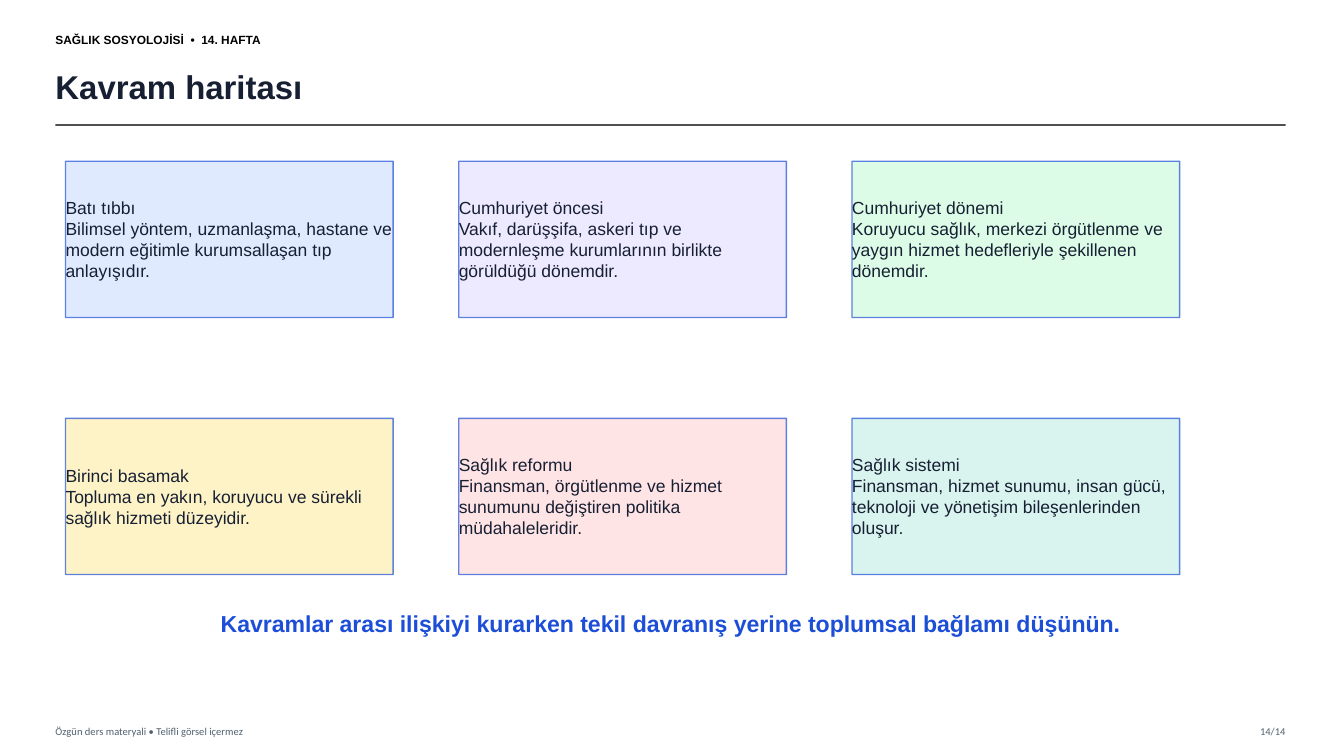
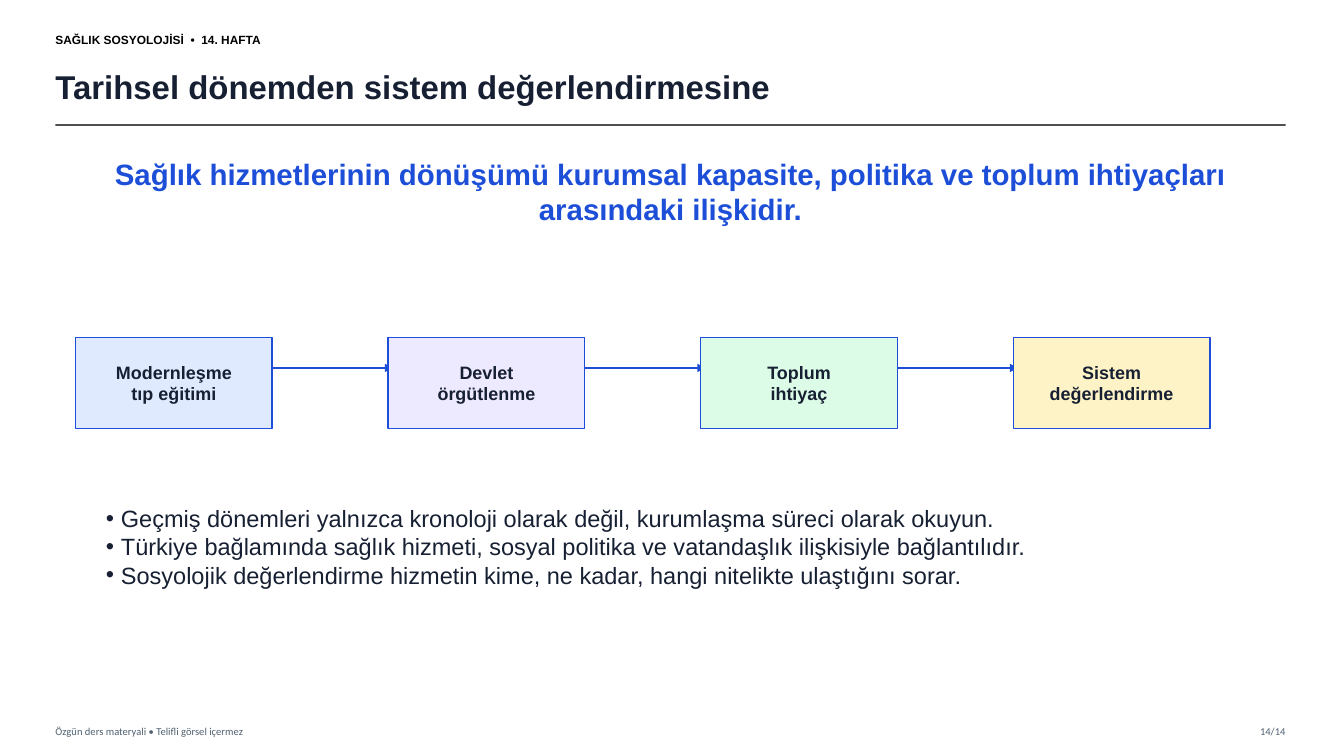
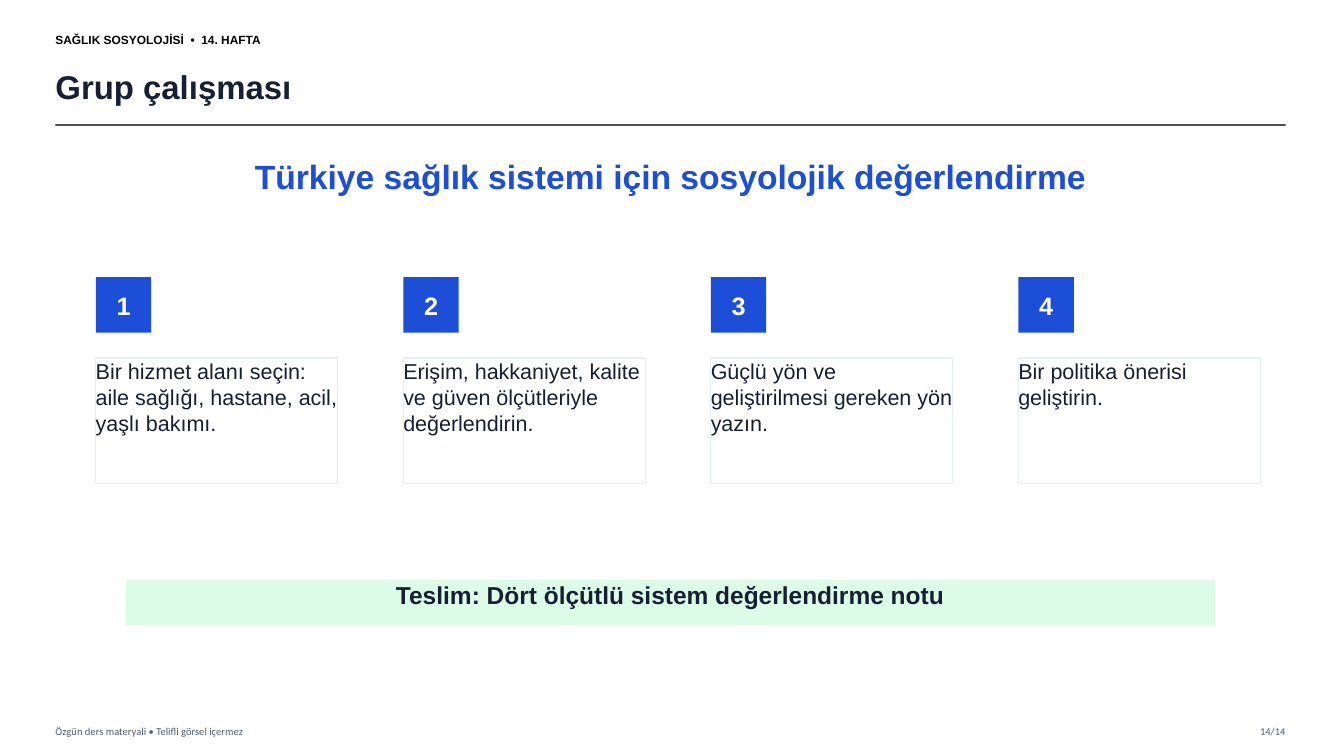
from dataclasses import dataclass, replace
from typing import NamedTuple, Optional

from pptx import Presentation
from pptx.dml.color import RGBColor
from pptx.enum.shapes import MSO_CONNECTOR, MSO_SHAPE
from pptx.enum.text import MSO_ANCHOR, PP_ALIGN
from pptx.oxml.ns import qn
from pptx.util import Pt
from lxml import etree

RECT = MSO_SHAPE.RECTANGLE
STRAIGHT = MSO_CONNECTOR.STRAIGHT
TOP, MIDDLE = MSO_ANCHOR.TOP, MSO_ANCHOR.MIDDLE
LEFT, CENTER, RIGHT = PP_ALIGN.LEFT, PP_ALIGN.CENTER, PP_ALIGN.RIGHT

EMU_PER_PX = 9144  # 100 px to the inch

COLORS = {
    "black": "000000", "white": "FFFFFF", "ink": "172033", "accent": "1D4ED8",
    "rule": "333333", "footer": "506070", "border": "E8EEF5",
    "blue": "DFEAFE", "violet": "EDE9FE", "green": "DCFCE7",
    "yellow": "FEF3C7", "rose": "FFE4E6", "teal": "D9F3EE",
}


class Box(NamedTuple):
    x: int
    y: int
    w: int
    h: int


@dataclass(frozen=True)
class Style:
    size: float
    color: str = "ink"
    bold: bool = False
    align: PP_ALIGN = LEFT
    anchor: MSO_ANCHOR = TOP
    font: str = "Arial"


@dataclass(frozen=True)
class Stroke:
    color: str
    width: float = 1
    opacity: int = 100


class Card(NamedTuple):
    fill: str
    lines: list[str]


KICKER = Style(8.5, "black", bold=True, anchor=MIDDLE)
TITLE = Style(23.5, bold=True, anchor=MIDDLE)
FOOTER = Style(7.5, "footer", anchor=MIDDLE, font="Calibri")
PAGE_NUMBER = replace(FOOTER, align=RIGHT)
CONCEPT = Style(12.5, anchor=MIDDLE)
STAGE = Style(12.8, bold=True, align=CENTER, anchor=MIDDLE)
BULLETS = Style(16.8)
BADGE = Style(18, "white", bold=True, align=CENTER, anchor=MIDDLE)
TASK = Style(15.4)
DELIVERY = Style(17.5, bold=True, align=CENTER)

BULLET_INDENT = 15

CONCEPTS = [
    Card("blue", ["Batı tıbbı", "Bilimsel yöntem, uzmanlaşma, hastane ve modern "
                  "eğitimle kurumsallaşan tıp anlayışıdır."]),
    Card("violet", ["Cumhuriyet öncesi", "Vakıf, darüşşifa, askeri tıp ve modernleşme "
                    "kurumlarının birlikte görüldüğü dönemdir."]),
    Card("green", ["Cumhuriyet dönemi", "Koruyucu sağlık, merkezi örgütlenme ve yaygın "
                   "hizmet hedefleriyle şekillenen dönemdir."]),
    Card("yellow", ["Birinci basamak", "Topluma en yakın, koruyucu ve sürekli sağlık "
                    "hizmeti düzeyidir."]),
    Card("rose", ["Sağlık reformu", "Finansman, örgütlenme ve hizmet sunumunu "
                  "değiştiren politika müdahaleleridir."]),
    Card("teal", ["Sağlık sistemi", "Finansman, hizmet sunumu, insan gücü, teknoloji "
                  "ve yönetişim bileşenlerinden oluşur."]),
]

STAGES = [
    Card("blue", ["Modernleşme", "tıp eğitimi"]),
    Card("violet", ["Devlet", "örgütlenme"]),
    Card("green", ["Toplum", "ihtiyaç"]),
    Card("yellow", ["Sistem", "değerlendirme"]),
]

READING_NOTES = [
    "Geçmiş dönemleri yalnızca kronoloji olarak değil, kurumlaşma süreci olarak okuyun.",
    "Türkiye bağlamında sağlık hizmeti, sosyal politika ve vatandaşlık ilişkisiyle bağlantılıdır.",
    "Sosyolojik değerlendirme hizmetin kime, ne kadar, hangi nitelikte ulaştığını sorar.",
]

TASKS = [
    "Bir hizmet alanı seçin: aile sağlığı, hastane, acil, yaşlı bakımı.",
    "Erişim, hakkaniyet, kalite ve güven ölçütleriyle değerlendirin.",
    "Güçlü yön ve geliştirilmesi gereken yön yazın.",
    "Bir politika önerisi geliştirin.",
]


def px(n: int) -> int:
    return n * EMU_PER_PX


def rgb(name: str) -> RGBColor:
    return RGBColor.from_string(COLORS[name])


def add_bullet(p) -> None:
    pPr = p._p.get_or_add_pPr()
    pPr.set("marL", str(px(BULLET_INDENT)))
    pPr.set("indent", str(-px(BULLET_INDENT)))
    etree.SubElement(pPr, qn("a:buFont")).set("typeface", "Arial")
    etree.SubElement(pPr, qn("a:buChar")).set("char", "•")


def write(sp, lines: list[str], style: Style, bulleted: bool = False) -> None:
    tf = sp.text_frame
    tf.word_wrap = True
    tf.vertical_anchor = style.anchor
    tf.margin_left = tf.margin_top = tf.margin_right = tf.margin_bottom = 0
    for i, line in enumerate(lines):
        p = tf.add_paragraph() if i else tf.paragraphs[0]
        p.alignment = style.align
        if bulleted:
            add_bullet(p)
        r = p.add_run()
        r.text = line
        r.font.size = Pt(style.size)
        r.font.name = style.font
        r.font.bold = style.bold
        r.font.color.rgb = rgb(style.color)


def add_text(s, box: Box, lines: list[str], style: Style, bulleted: bool = False) -> None:
    write(s.shapes.add_textbox(*map(px, box)), lines, style, bulleted)


def apply_stroke(sp, stroke: Stroke) -> None:
    sp.line.color.rgb = rgb(stroke.color)
    sp.line.width = Pt(stroke.width)
    if stroke.opacity < 100:
        color = sp._element.xpath("./p:spPr/a:ln//a:srgbClr")[0]
        etree.SubElement(color, qn("a:alpha")).set("val", str(stroke.opacity * 1000))


def add_rect(s, box: Box, fill: str, lines: list[str], style: Style,
             stroke: Optional[Stroke] = None) -> None:
    sp = s.shapes.add_shape(RECT, *map(px, box))
    sp.shadow.inherit = False
    sp.fill.solid()
    sp.fill.fore_color.rgb = rgb(fill)
    if stroke:
        apply_stroke(sp, stroke)
    else:
        sp.line.fill.background()
    write(sp, lines, style)


def add_rule(s, x1: int, x2: int, y: int, stroke: Stroke, arrow: bool = False) -> None:
    """Draw a horizontal line, with an arrowhead at x2 if asked."""
    line = s.shapes.add_connector(STRAIGHT, px(x1), px(y), px(x2), px(y))
    apply_stroke(line, stroke)
    spPr = line._element.spPr
    if arrow:
        etree.SubElement(spPr.find(qn("a:ln")), qn("a:tailEnd")).set("type", "triangle")
    etree.SubElement(spPr, qn("a:effectLst"))


def add_headline(s, box: Box, text: str, size: float) -> None:
    add_text(s, box, [text], Style(size, "accent", bold=True, align=CENTER))


def new_slide(prs, title: str):
    """Add a blank slide with the header, title, rule and footer."""
    s = prs.slides.add_slide(prs.slide_layouts[6])
    add_text(s, Box(55, 25, 360, 28), ["SAĞLIK SOSYOLOJİSİ  •  14. HAFTA"], KICKER)
    add_text(s, Box(55, 58, 1195, 55), [title], TITLE)
    add_rule(s, 55, 1275, 124, Stroke("rule", 1.2, 85))
    add_text(s, Box(55, 714, 600, 22),
             ["Özgün ders materyali • Telifli görsel içermez"], FOOTER)
    add_text(s, Box(1210, 714, 65, 22), ["14/14"], PAGE_NUMBER)
    return s


def concept_map(prs) -> None:
    s = new_slide(prs, "Kavram haritası")
    for i, card in enumerate(CONCEPTS):
        row, col = divmod(i, 3)
        box = Box(65 + 390 * col, 160 + 255 * row, 325, 155)
        add_rect(s, box, card.fill, card.lines, CONCEPT, Stroke("accent", opacity=70))
    add_headline(s, Box(100, 605, 1130, 45),
                 "Kavramlar arası ilişkiyi kurarken tekil davranış yerine "
                 "toplumsal bağlamı düşünün.", 16.5)


def period_to_system(prs) -> None:
    s = new_slide(prs, "Tarihsel dönemden sistem değerlendirmesine")
    left, pitch = 75, 310
    for i in range(len(STAGES) - 1):
        start = left + 180 + pitch * i
        add_rule(s, start, start + 135, 365, Stroke("accent", 2), arrow=True)
    for i, card in enumerate(STAGES):
        add_rect(s, Box(left + pitch * i, 335, 195, 90), card.fill, card.lines,
                 STAGE, Stroke("accent"))
    add_headline(s, Box(80, 155, 1170, 105),
                 "Sağlık hizmetlerinin dönüşümü kurumsal kapasite, politika ve "
                 "toplum ihtiyaçları arasındaki ilişkidir.", 21)
    add_text(s, Box(105, 500, 1100, 125), READING_NOTES, BULLETS, bulleted=True)


def group_work(prs) -> None:
    s = new_slide(prs, "Grup çalışması")
    add_headline(s, Box(75, 155, 1180, 65),
                 "Türkiye sağlık sistemi için sosyolojik değerlendirme", 24)
    for i, task in enumerate(TASKS):
        x = 95 + 305 * i
        add_rect(s, Box(x, 275, 55, 55), "accent", [str(i + 1)], BADGE)
        add_rect(s, Box(x, 355, 240, 125), "white", [task], TASK, Stroke("border"))
    add_rect(s, Box(125, 575, 1080, 45), "green",
             ["Teslim: Dört ölçütlü sistem değerlendirme notu"], DELIVERY)


def main() -> None:
    prs = Presentation()
    prs.slide_width, prs.slide_height = px(1333), px(750)
    concept_map(prs)
    period_to_system(prs)
    group_work(prs)
    prs.save("out.pptx")


if __name__ == "__main__":
    main()
